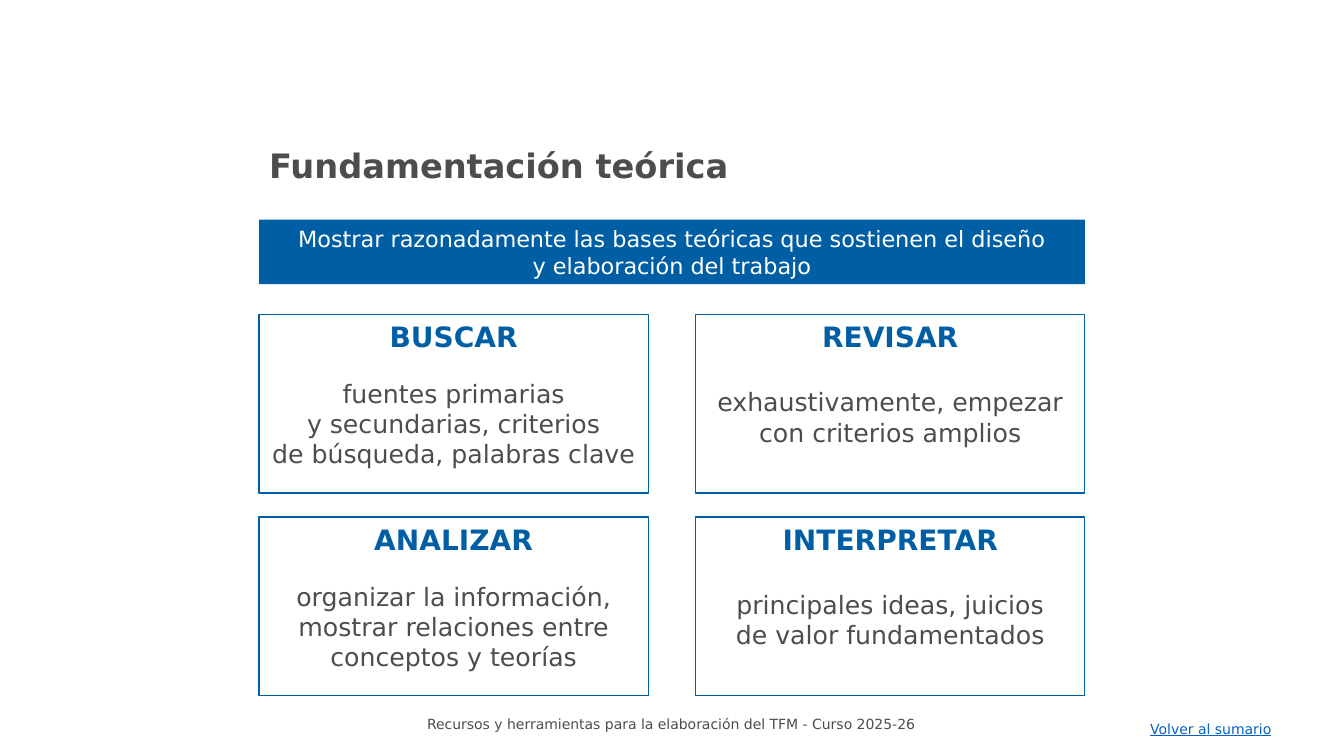
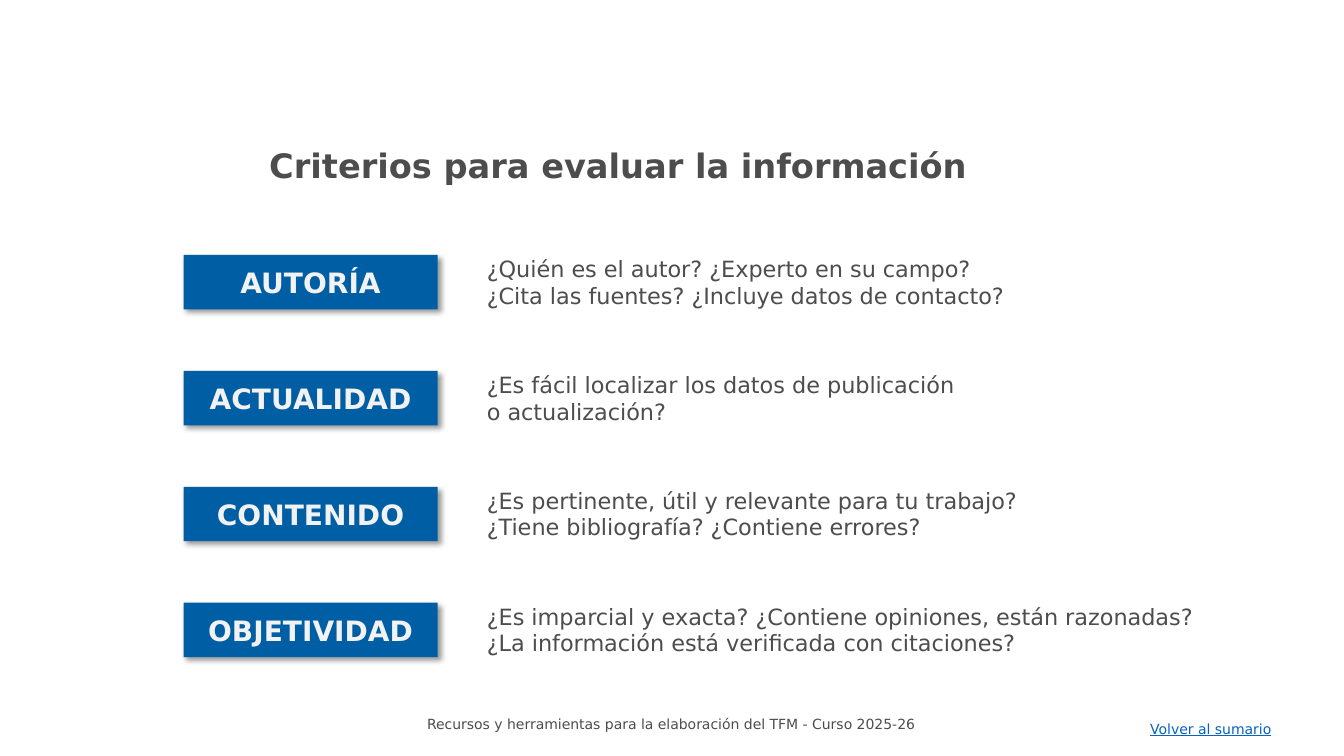
from dataclasses import dataclass

from lxml.etree import SubElement
from pptx import Presentation
from pptx.dml.color import RGBColor as Rgb
from pptx.enum.shapes import MSO_SHAPE as Form
from pptx.enum.text import MSO_ANCHOR as Anchor, MSO_AUTO_SIZE as Fit, PP_ALIGN as Align
from pptx.oxml.ns import qn
from pptx.util import Inches, Pt

WIDE, HIGH = 13.33, 7.5


@dataclass(frozen=True)
class Theme:
    font: str = "DejaVu Sans"
    blue: str = "005EA4"
    grey: str = "4D4D4D"
    white: str = "FFFFFF"
    pale: str = "F2F2F2"
    link: str = "0563C1"
    title: int = 24
    head: int = 20
    body: int = 18
    text: int = 16
    foot: int = 10


@dataclass(frozen=True)
class Box:
    left: float
    top: float
    width: float
    height: float

    def place(self) -> tuple:
        return tuple(Inches(n) for n in (self.left, self.top, self.width, self.height))


@dataclass(frozen=True)
class Grid:
    """Equal cells, starting at first and repeating at a fixed pitch."""
    first: Box
    across: float
    down: float

    def cell(self, col: int, row: int) -> Box:
        one = self.first
        return Box(one.left + col * self.across, one.top + row * self.down,
                   one.width, one.height)


@dataclass(frozen=True)
class Card:
    head: str
    lines: tuple[str, ...]
    gap: int


@dataclass(frozen=True)
class Check:
    tag: str
    lines: tuple[str, ...]
    width: float = 5.83


THEME = Theme()
TITLE = Box(2.57, 1.39, 8.35, 0.5)
BANNER = Box(2.57, 2.18, 8.19, 0.64)
FOOTER = Box(2.68, 7.05, 7.95, 0.27)
BACK = Box(11.31, 7.1, 1.44, 0.27)
CARDS = Grid(Box(2.57, 3.12, 3.86, 1.77), 4.33, 2.01)
# Column 0 holds the tags, column 1 the questions.
CHECKS = Grid(Box(1.82, 2.53, 2.52, 0.54), 2.91, 1.15)

CARD_LIST = (
    Card("BUSCAR", ("fuentes primarias", "y secundarias, criterios",
                    "de búsqueda, palabras clave"), 18),
    Card("REVISAR", ("exhaustivamente, empezar con criterios amplios",), 24),
    Card("ANALIZAR", ("organizar la información, mostrar relaciones entre "
                      "conceptos y teorías",), 18),
    Card("INTERPRETAR", ("principales ideas, juicios", "de valor fundamentados"), 24),
)
CHECK_LIST = (
    Check("AUTORÍA", ("¿Quién es el autor? ¿Experto en su campo?",
                      "¿Cita las fuentes? ¿Incluye datos de contacto?")),
    Check("ACTUALIDAD", ("¿Es fácil localizar los datos de publicación",
                         "o actualización?")),
    Check("CONTENIDO", ("¿Es pertinente, útil y relevante para tu trabajo? "
                        "¿Tiene bibliografía? ¿Contiene errores?",)),
    Check("OBJETIVIDAD", ("¿Es imparcial y exacta? ¿Contiene opiniones, están razonadas? "
                          "¿La información está verificada con citaciones?",), 7.45),
)


def style(para, size: int, color: str, bold: bool = False, align=Align.LEFT) -> None:
    para.alignment = align
    for run in para.runs:
        font = run.font
        font.name, font.size, font.bold = THEME.font, Pt(size), bold
        font.color.rgb = Rgb.from_string(color)


def write(shape, lines: tuple[str, ...], size: int, color: str, bold: bool = False,
          align=Align.LEFT, anchor=Anchor.TOP) -> None:
    frame = shape.text_frame
    frame.text = "\n".join(lines)
    frame.word_wrap = True
    frame.vertical_anchor = anchor
    for para in frame.paragraphs:
        style(para, size, color, bold, align)


def add_text(slide, box: Box, lines: tuple[str, ...], size: int, color: str,
             align=Align.LEFT):
    shape = slide.shapes.add_textbox(*box.place())
    write(shape, lines, size, color, align=align)
    return shape


def add_rect(slide, box: Box, fill: str, line: str | None = None):
    rect = slide.shapes.add_shape(Form.RECTANGLE, *box.place())
    rect.shadow.inherit = False
    rect.fill.solid()
    rect.fill.fore_color.rgb = Rgb.from_string(fill)
    if line:
        rect.line.color.rgb = Rgb.from_string(line)
        rect.line.width = Pt(1)
    else:
        rect.line.fill.background()
    return rect


def cast_shade(shape) -> None:
    """Add a soft shadow to the lower right."""
    effect = shape.element.spPr.find(qn("a:effectLst"))
    shade = SubElement(effect, qn("a:outerShdw"), blurRad=str(Pt(4)), dist=str(Pt(3)),
                       dir=str(45 * 60000), algn="tl", rotWithShape="0")
    color = SubElement(shade, qn("a:srgbClr"), val="000000")
    SubElement(color, qn("a:alpha"), val="40000")


def add_slide(deck, layout, title: str):
    slide = deck.slides.add_slide(layout)
    head = slide.shapes.title
    write(head, (title,), THEME.title, THEME.grey, bold=True)
    head.text_frame.auto_size = Fit.NONE
    return slide


def set_layout(layout, slide) -> None:
    """Fix the title's place and move the footer texts from slide to layout."""
    title = next(iter(layout.placeholders))
    title.left, title.top, title.width, title.height = TITLE.place()
    foot = add_text(slide, FOOTER,
                    ("Recursos y herramientas para la elaboración del TFM - Curso 2025-26",),
                    THEME.foot, THEME.grey, Align.CENTER)
    back = add_text(slide, BACK, ("Volver al sumario",), THEME.foot, THEME.link)
    back.text_frame.word_wrap = False
    back.text_frame.paragraphs[0].runs[0].font.underline = True
    for shape in (foot, back):
        layout.shapes.element.append(shape.element)


def draw_cards(slide) -> None:
    banner = add_rect(slide, BANNER, THEME.blue)
    write(banner, ("Mostrar razonadamente las bases teóricas que sostienen el diseño",
                   "y elaboración del trabajo"),
          THEME.text, THEME.white, align=Align.CENTER, anchor=Anchor.MIDDLE)
    for i, card in enumerate(CARD_LIST):
        rect = add_rect(slide, CARDS.cell(i % 2, i // 2), THEME.white, THEME.blue)
        write(rect, (card.head, *card.lines), THEME.body, THEME.grey, align=Align.CENTER)
        head = rect.text_frame.paragraphs[0]
        style(head, THEME.head, THEME.blue, True, Align.CENTER)
        head.space_after = Pt(card.gap)


def draw_checks(slide) -> None:
    for row, check in enumerate(CHECK_LIST):
        tag = add_rect(slide, CHECKS.cell(0, row), THEME.blue)
        cast_shade(tag)
        write(tag, (check.tag,), THEME.head, THEME.pale, True, Align.CENTER, Anchor.MIDDLE)
        cell = CHECKS.cell(1, row)
        add_text(slide, Box(cell.left, cell.top - 0.05, check.width, cell.height + 0.1),
                 check.lines, THEME.text, THEME.grey)


def main() -> None:
    deck = Presentation()
    deck.slide_width, deck.slide_height = Inches(WIDE), Inches(HIGH)
    layout = deck.slide_layouts.get_by_name("Title Only")
    theory = add_slide(deck, layout, "Fundamentación teórica")
    set_layout(layout, theory)
    draw_cards(theory)
    draw_checks(add_slide(deck, layout, "Criterios para evaluar la información"))
    deck.save("out.pptx")


if __name__ == "__main__":
    main()
